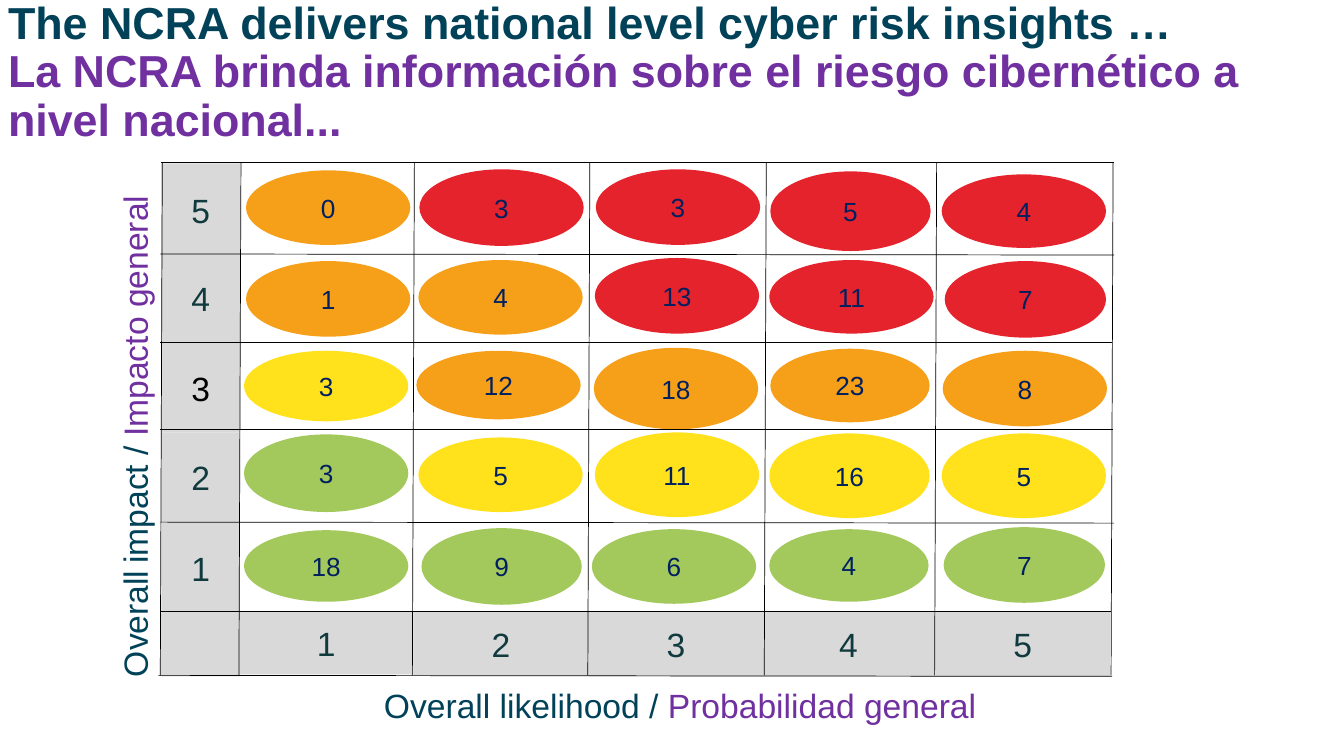
from dataclasses import dataclass
from typing import NamedTuple

from lxml.etree import SubElement
from pptx import Presentation
from pptx.dml.color import RGBColor
from pptx.enum.shapes import MSO_CONNECTOR, MSO_SHAPE
from pptx.enum.text import MSO_ANCHOR, MSO_AUTO_SIZE, PP_ALIGN
from pptx.oxml.ns import qn
from pptx.util import Inches, Pt


@dataclass(frozen=True)
class Theme:
    font: str = "Arial"
    title_size: float = 32
    axis_size: float = 24
    gap_size: float = 18
    count_size: float = 18.7
    grid_width: float = 0.5
    english: RGBColor = RGBColor(0x02, 0x42, 0x59)
    spanish: RGBColor = RGBColor(0x70, 0x30, 0xA0)
    score: RGBColor = RGBColor(0x10, 0x3A, 0x3E)
    count: RGBColor = RGBColor(0x00, 0x20, 0x60)
    black: RGBColor = RGBColor(0x00, 0x00, 0x00)
    header: RGBColor = RGBColor(0xD9, 0xD9, 0xD9)
    green: RGBColor = RGBColor(0xA3, 0xC9, 0x5C)
    yellow: RGBColor = RGBColor(0xFF, 0xE2, 0x1B)
    orange: RGBColor = RGBColor(0xF6, 0x9F, 0x19)
    red: RGBColor = RGBColor(0xE5, 0x23, 0x2C)


THEME = Theme()


class Box(NamedTuple):
    left: float
    top: float
    width: float
    height: float

    def inches(self) -> tuple:
        return tuple(Inches(length) for length in self)


class Phrase(NamedTuple):
    text: str
    size: float
    color: RGBColor
    bold: bool = False


class ScoreCell(NamedTuple):
    score: str
    box: Box
    color: RGBColor = THEME.score


class RiskCount(NamedTuple):
    count: int
    level: RGBColor
    box: Box


class GridLine(NamedTuple):
    x1: float
    y1: float
    x2: float
    y2: float


SCORE_CELLS = [
    ScoreCell("5", Box(1.6, 1.62, 0.78, 0.92)),
    ScoreCell("4", Box(1.6, 2.51, 0.78, 0.89)),
    ScoreCell("3", Box(1.6, 3.4, 0.78, 0.89), THEME.black),
    ScoreCell("2", Box(1.6, 4.29, 0.78, 0.89)),
    ScoreCell("1", Box(1.6, 5.19, 0.78, 0.9)),
    ScoreCell("1", Box(2.37, 6.07, 1.73, 0.62)),
    ScoreCell("2", Box(4.1, 6.07, 1.74, 0.63)),
    ScoreCell("3", Box(5.84, 6.07, 1.73, 0.64)),
    ScoreCell("4", Box(7.55, 6.07, 1.73, 0.64)),
    ScoreCell("5", Box(9.28, 6.07, 1.73, 0.64)),
    ScoreCell("", Box(1.59, 6.09, 0.79, 0.62)),
]

RISK_COUNTS = [
    RiskCount(0, THEME.orange, Box(2.44, 1.69, 1.63, 0.74)),
    RiskCount(3, THEME.red, Box(4.16, 1.68, 1.63, 0.76)),
    RiskCount(3, THEME.red, Box(5.91, 1.68, 1.63, 0.75)),
    RiskCount(5, THEME.red, Box(7.64, 1.7, 1.59, 0.79)),
    RiskCount(4, THEME.red, Box(9.34, 1.73, 1.63, 0.73)),
    RiskCount(1, THEME.orange, Box(2.44, 2.59, 1.63, 0.75)),
    RiskCount(4, THEME.orange, Box(4.15, 2.58, 1.63, 0.74)),
    RiskCount(13, THEME.red, Box(5.9, 2.56, 1.63, 0.75)),
    RiskCount(11, THEME.red, Box(7.63, 2.58, 1.63, 0.73)),
    RiskCount(7, THEME.red, Box(9.37, 2.59, 1.6, 0.76)),
    RiskCount(3, THEME.yellow, Box(2.42, 3.48, 1.63, 0.7)),
    RiskCount(12, THEME.orange, Box(4.13, 3.48, 1.63, 0.68)),
    RiskCount(18, THEME.orange, Box(5.89, 3.45, 1.63, 0.81)),
    RiskCount(23, THEME.orange, Box(7.64, 3.46, 1.58, 0.73)),
    RiskCount(8, THEME.orange, Box(9.35, 3.48, 1.63, 0.75)),
    RiskCount(3, THEME.green, Box(2.42, 4.31, 1.63, 0.77)),
    RiskCount(5, THEME.yellow, Box(4.15, 4.34, 1.63, 0.74)),
    RiskCount(11, THEME.yellow, Box(5.9, 4.29, 1.63, 0.84)),
    RiskCount(16, THEME.yellow, Box(7.63, 4.3, 1.59, 0.84)),
    RiskCount(5, THEME.yellow, Box(9.34, 4.3, 1.63, 0.84)),
    RiskCount(18, THEME.green, Box(2.42, 5.26, 1.63, 0.71)),
    RiskCount(9, THEME.green, Box(4.18, 5.24, 1.59, 0.76)),
    RiskCount(6, THEME.green, Box(5.87, 5.25, 1.63, 0.74)),
    RiskCount(4, THEME.green, Box(7.63, 5.25, 1.58, 0.72)),
    RiskCount(7, THEME.green, Box(9.36, 5.23, 1.6, 0.75)),
]

ROW_LINES = [
    GridLine(1.6, 1.61, 11.05, 1.61),
    GridLine(1.59, 2.52, 11.05, 2.53),
    GridLine(1.59, 3.4, 11.03, 3.4),
    GridLine(1.59, 4.26, 11.04, 4.26),
    GridLine(1.59, 5.18, 11.05, 5.19),
    GridLine(1.6, 6.07, 11.02, 6.07),
    GridLine(1.57, 6.7, 11.03, 6.71),
]
COLUMN_LINES = [
    GridLine(x, 1.61, x - 0.02, 6.7)
    for x in (1.61, 2.39, 4.11, 5.85, 7.6, 9.29, 11.04)
]


def write(frame, phrases: list[Phrase], align=PP_ALIGN.LEFT,
          anchor=MSO_ANCHOR.MIDDLE, wrap: bool = True,
          fit=MSO_AUTO_SIZE.NONE, line_spacing: float = 1.0) -> None:
    frame.word_wrap = wrap
    frame.auto_size = fit
    frame.vertical_anchor = anchor
    paragraph = frame.paragraphs[0]
    paragraph.alignment = align
    paragraph.line_spacing = line_spacing
    for phrase in phrases:
        run = paragraph.add_run()
        run.text = phrase.text.rstrip("\n")
        run.font.name = THEME.font
        run.font.size = Pt(phrase.size)
        run.font.bold = phrase.bold
        run.font.color.rgb = phrase.color
        if phrase.text.endswith("\n"):
            paragraph.add_line_break()


def add_cell(slide, kind: MSO_SHAPE, box: Box, fill: RGBColor, label: Phrase) -> None:
    cell = slide.shapes.add_shape(kind, *box.inches())
    cell.shadow.inherit = False
    cell.fill.solid()
    cell.fill.fore_color.rgb = fill
    cell.line.fill.background()
    if label.text:
        write(cell.text_frame, [label], align=PP_ALIGN.CENTER)


def add_axis_title(slide, box: Box, phrases: list[Phrase], rotation: float = 0) -> None:
    axis_title = slide.shapes.add_textbox(*box.inches())
    axis_title.rotation = rotation
    write(axis_title.text_frame, phrases, anchor=MSO_ANCHOR.TOP, wrap=False,
          fit=MSO_AUTO_SIZE.SHAPE_TO_FIT_TEXT)


def add_grid_line(slide, ends: GridLine) -> None:
    grid_line = slide.shapes.add_connector(
        MSO_CONNECTOR.STRAIGHT, *(Inches(end) for end in ends))
    grid_line.line.color.rgb = THEME.black
    grid_line.line.width = Pt(THEME.grid_width)
    SubElement(grid_line._element.spPr, qn("a:effectLst"))


def add_title(slide) -> None:
    title = slide.shapes.title
    title.left, title.top, title.width, title.height = Box(0.08, -0.05, 13.02, 1.55).inches()
    frame = title.text_frame
    frame.margin_left = frame.margin_right = frame.margin_top = frame.margin_bottom = 0
    write(frame, [
        Phrase("The NCRA delivers national level cyber risk insights …\n",
               THEME.title_size, THEME.english, True),
        Phrase("La NCRA brinda información sobre el riesgo cibernético a nivel nacional...",
               THEME.title_size, THEME.spanish, True),
    ], line_spacing=0.9)


def main() -> None:
    deck = Presentation()
    deck.slide_width, deck.slide_height = Inches(13.33), Inches(7.5)
    slide = deck.slides.add_slide(deck.slide_layouts[5])
    add_title(slide)
    for score, box, color in SCORE_CELLS:
        add_cell(slide, MSO_SHAPE.RECTANGLE, box, THEME.header,
                 Phrase(score, THEME.axis_size, color))
    add_axis_title(slide, Box(-1.18, 4.05, 5.03, 0.5), [
        Phrase("Overall", THEME.axis_size, THEME.english),
        Phrase(" ", THEME.gap_size, THEME.black),
        Phrase("impact / ", THEME.axis_size, THEME.english),
        Phrase("Impacto general", THEME.axis_size, THEME.spanish),
    ], rotation=270)
    add_axis_title(slide, Box(3.71, 6.75, 6.14, 0.5), [
        Phrase("Overall likelihood / ", THEME.axis_size, THEME.english),
        Phrase("Probabilidad general", THEME.axis_size, THEME.spanish),
    ])
    for count, level, box in RISK_COUNTS:
        add_cell(slide, MSO_SHAPE.OVAL, box, level,
                 Phrase(str(count), THEME.count_size, THEME.count))
    for ends in ROW_LINES + COLUMN_LINES:
        add_grid_line(slide, ends)
    deck.save("out.pptx")


if __name__ == "__main__":
    main()
